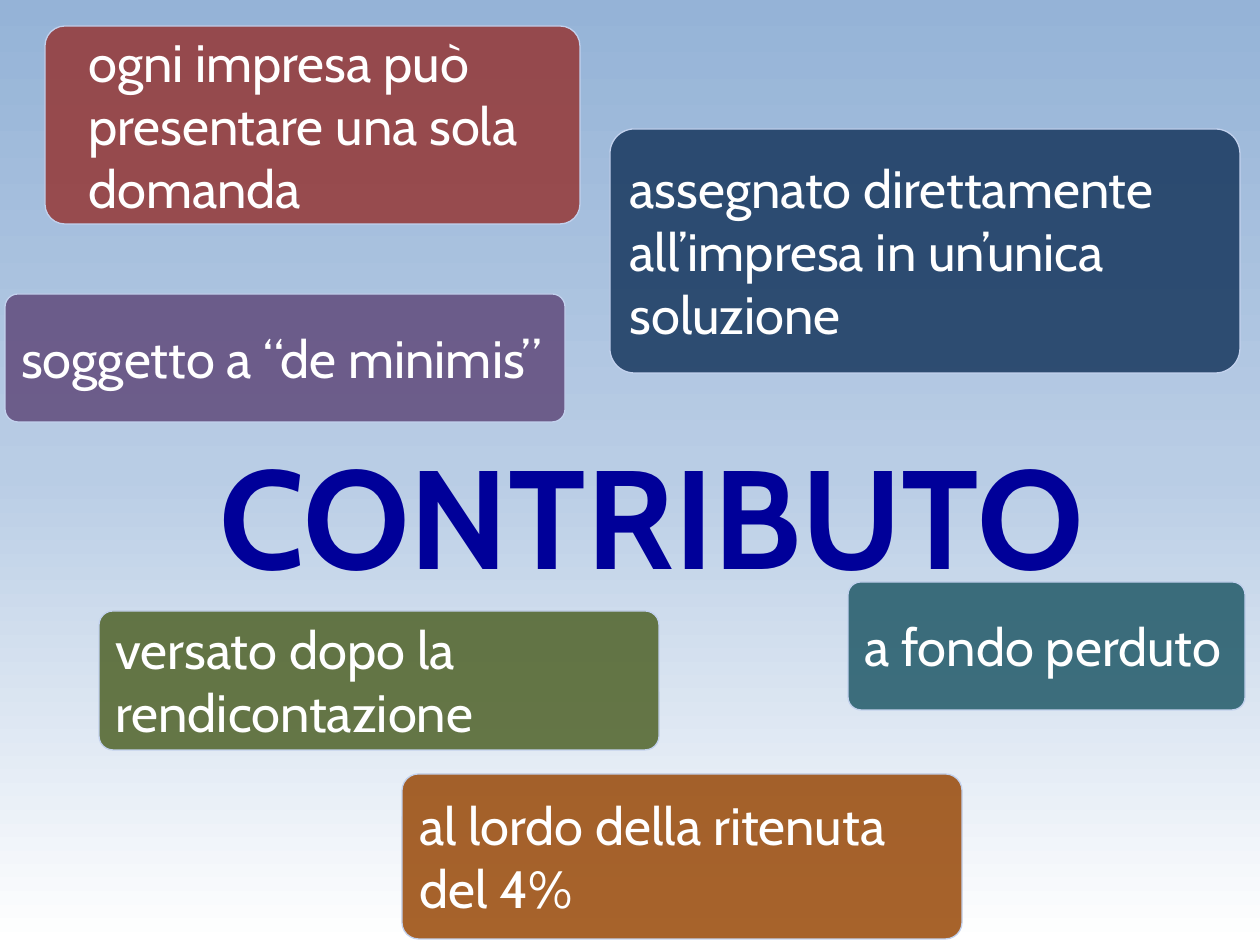
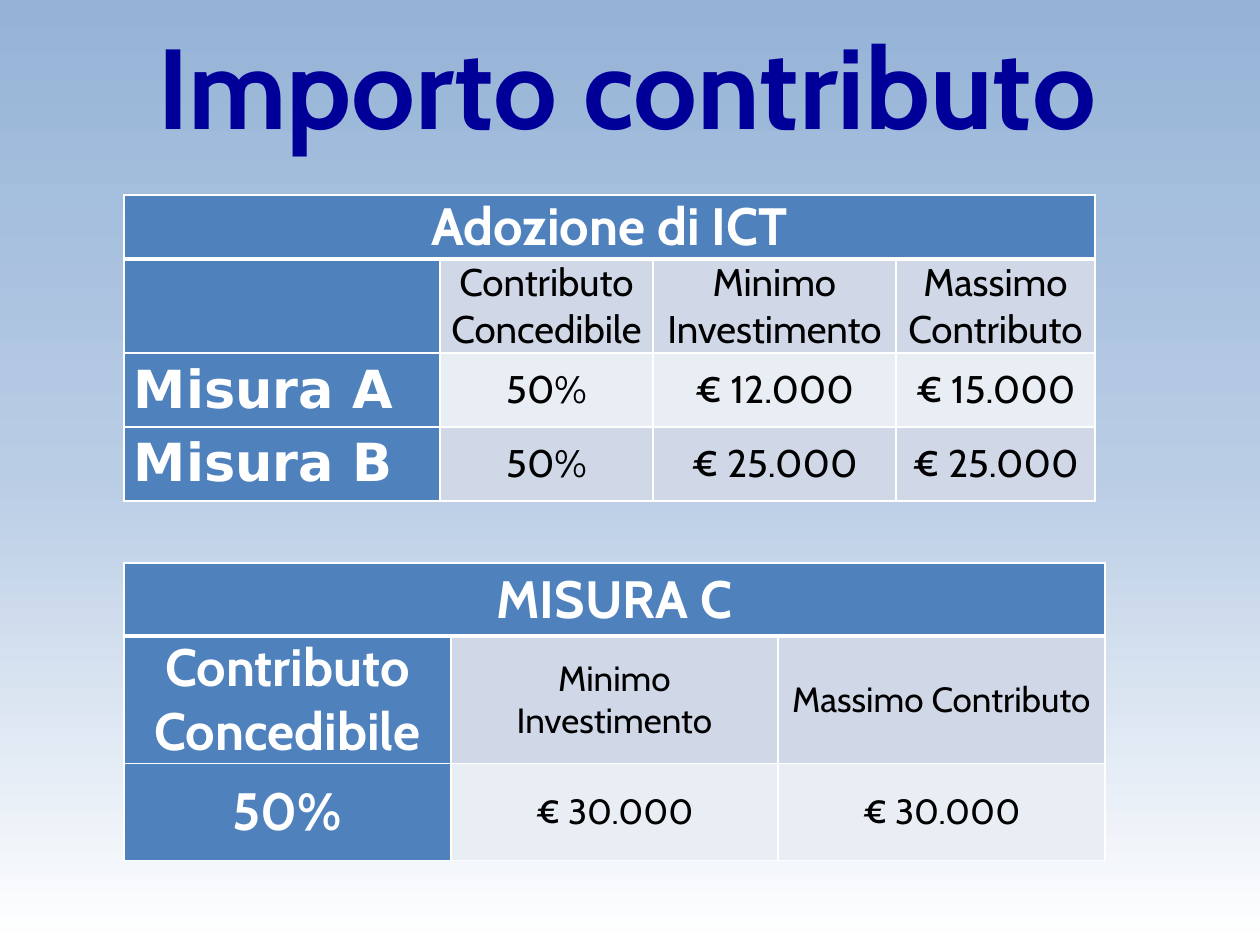
import copy

import lxml.etree
import pptx
import pptx.dml.color
import pptx.enum.shapes
import pptx.enum.text
import pptx.oxml.ns
import pptx.util

RGB = pptx.dml.color.RGBColor
ALIGN = pptx.enum.text.PP_ALIGN
MIDDLE = pptx.enum.text.MSO_ANCHOR.MIDDLE
qn = pptx.oxml.ns.qn

PX = 914400 / 126
FONT = "Cabin"
MEASURE_FONT = "DejaVu Sans"
WHITE = RGB(0xFF, 0xFF, 0xFF)
BLACK = RGB(0x00, 0x00, 0x00)
NAVY = RGB(0x00, 0x00, 0x99)
OUTLINE = RGB(0xC2, 0xD1, 0xED)
RED = RGB(0x95, 0x37, 0x35)
BLUE = RGB(0x17, 0x37, 0x5E)
PURPLE = RGB(0x60, 0x4A, 0x7B)
GREEN = RGB(0x4F, 0x62, 0x28)
TEAL = RGB(0x21, 0x59, 0x68)
ORANGE = RGB(0x98, 0x48, 0x07)
HEADER = RGB(0x4F, 0x81, 0xBD)
BANDS = [RGB(0xE9, 0xED, 0xF4), RGB(0xD0, 0xD8, 0xE8)]
SKY = [(0, RGB(0x95, 0xB3, 0xD7)), (0.5, RGB(0xB9, 0xCD, 0xE5)), (1, WHITE)]


def emu(*lengths):
    return [pptx.util.Emu(round(length * PX)) for length in lengths]


def write(frame, text, size, color, bold=False, align=ALIGN.LEFT, font=FONT):
    para = frame.paragraphs[0]
    para.alignment = align
    run = para.add_run()
    run.text = text
    run.font.name = font
    run.font.size = pptx.util.Pt(size)
    run.font.bold = bold
    run.font.color.rgb = color
    return para


deck = pptx.Presentation()
deck.slide_width, deck.slide_height = emu(1260, 945)

master = deck.slide_master
sky = master.background.fill
sky.gradient()
sky.gradient_angle = 270
stops = master.element.find(".//" + qn("a:gsLst"))
stops.insert(1, copy.deepcopy(stops[0]))
for stop, (position, color) in zip(sky.gradient_stops, SKY):
    stop.position = position
    stop.color.rgb = color

titles = [
    ("CONTRIBUTO", 80, (35, 422, 1171, 183), 63),
    ("Importo contributo", 65, (63, 34, 1128, 101), 0),
]
pages = []
for text, size, place, indent in titles:
    page = deck.slides.add_slide(deck.slide_layouts.get_by_name("Title Only"))
    title = page.shapes.title
    title.left, title.top, title.width, title.height = emu(*place)
    frame = title.text_frame
    frame.auto_size = pptx.enum.text.MSO_AUTO_SIZE.NONE
    frame.word_wrap = True
    frame.vertical_anchor = MIDDLE
    para = write(frame, text, size, NAVY, True, ALIGN.CENTER)
    properties = para._p.get_or_add_pPr()
    properties.set("marL", str(emu(indent)[0]))
    properties.set("indent", "0")
    pages.append(page)

features = [
    ("a fondo perduto", TEAL, (848, 582, 397, 128), 0, 10),
    ("ogni impresa può presentare una sola domanda", RED, (45, 26, 535, 198), 25, 0),
    ("assegnato direttamente all’impresa in un’unica soluzione", BLUE, (610, 129, 630, 244), 0, 10),
    ("soggetto a “de minimis”", PURPLE, (5, 294, 560, 128), 0, 0),
    ("versato dopo la rendicontazione", GREEN, (99, 611, 560, 139), 0, 10),
    ("al lordo della ritenuta del 4%", ORANGE, (402, 774, 560, 165), 0, 10),
]
for text, color, place, indent, space in features:
    box = pages[0].shapes.add_shape(pptx.enum.shapes.MSO_SHAPE.ROUNDED_RECTANGLE, *emu(*place))
    box.adjustments[0] = 0.1
    box.shadow.inherit = False
    box.fill.solid()
    box.fill.fore_color.rgb = color
    tint = box._element.spPr.find(qn("a:solidFill"))[0]
    lxml.etree.SubElement(tint, qn("a:alpha")).set("val", "85000")
    box.line.color.rgb = OUTLINE
    box.line.width = pptx.util.Pt(0.75)
    box.text_frame.word_wrap = True
    box.text_frame.vertical_anchor = MIDDLE
    para = write(box.text_frame, text, 30, WHITE)
    para.space_before = pptx.util.Pt(space)
    para._p.get_or_add_pPr().set("marL", str(emu(indent)[0]))

measures_ab = [
    ["Adozione di ICT", "", "", ""],
    ["", "Contributo Concedibile", "Minimo Investimento", "Massimo Contributo"],
    ["Misura A", "50%", "€ 12.000", "€ 15.000"],
    ["Misura B", "50%", "€ 25.000", "€ 25.000"],
]
measure_c = [
    ["MISURA C", "", ""],
    ["Contributo Concedibile", "Minimo Investimento", "Massimo Contributo"],
    ["50%", "€ 30.000", "€ 30.000"],
]
tables = [
    (measures_ab, 195, [316, 213, 243, 199], [63, 94, 74, 74], 22),
    (measure_c, 563, [327] * 3, [73, 127, 97], 20),
]
for rows, top, widths, heights, body_size in tables:
    place = emu(124, top, sum(widths), sum(heights))
    table = pages[1].shapes.add_table(len(rows), len(widths), *place).table
    for column, width in zip(table.columns, emu(*widths)):
        column.width = width
    for row, height in zip(table.rows, emu(*heights)):
        row.height = height
    table.cell(0, 0).merge(table.cell(0, len(widths) - 1))
    for r, texts in enumerate(rows):
        for c, text in enumerate(texts):
            cell = table.cell(r, c)
            cell.vertical_anchor = MIDDLE
            cell.margin_left, cell.margin_right = emu(10, 10)
            cell.margin_top = cell.margin_bottom = 0
            thick = {0: "lnB", 1: "lnT"}.get(r)
            for side in ("lnL", "lnR", "lnT", "lnB"):
                width = pptx.util.Pt(3 if side == thick else 1)
                border = lxml.etree.SubElement(cell._tc.get_or_add_tcPr(), qn("a:" + side))
                border.set("w", str(width))
                paint = lxml.etree.SubElement(border, qn("a:solidFill"))
                lxml.etree.SubElement(paint, qn("a:srgbClr")).set("val", str(WHITE))
            heading = r == 0 or c == 0
            cell.fill.solid()
            cell.fill.fore_color.rgb = HEADER if heading else BANDS[r % 2]
            if not text:
                continue
            if text.startswith("Misura"):
                write(cell.text_frame, text, 30, WHITE, True, ALIGN.JUSTIFY, MEASURE_FONT)
            elif heading:
                write(cell.text_frame, text, 30, WHITE, True, ALIGN.CENTER)
            else:
                write(cell.text_frame, text, body_size, BLACK, False, ALIGN.CENTER)

deck.save("out.pptx")
